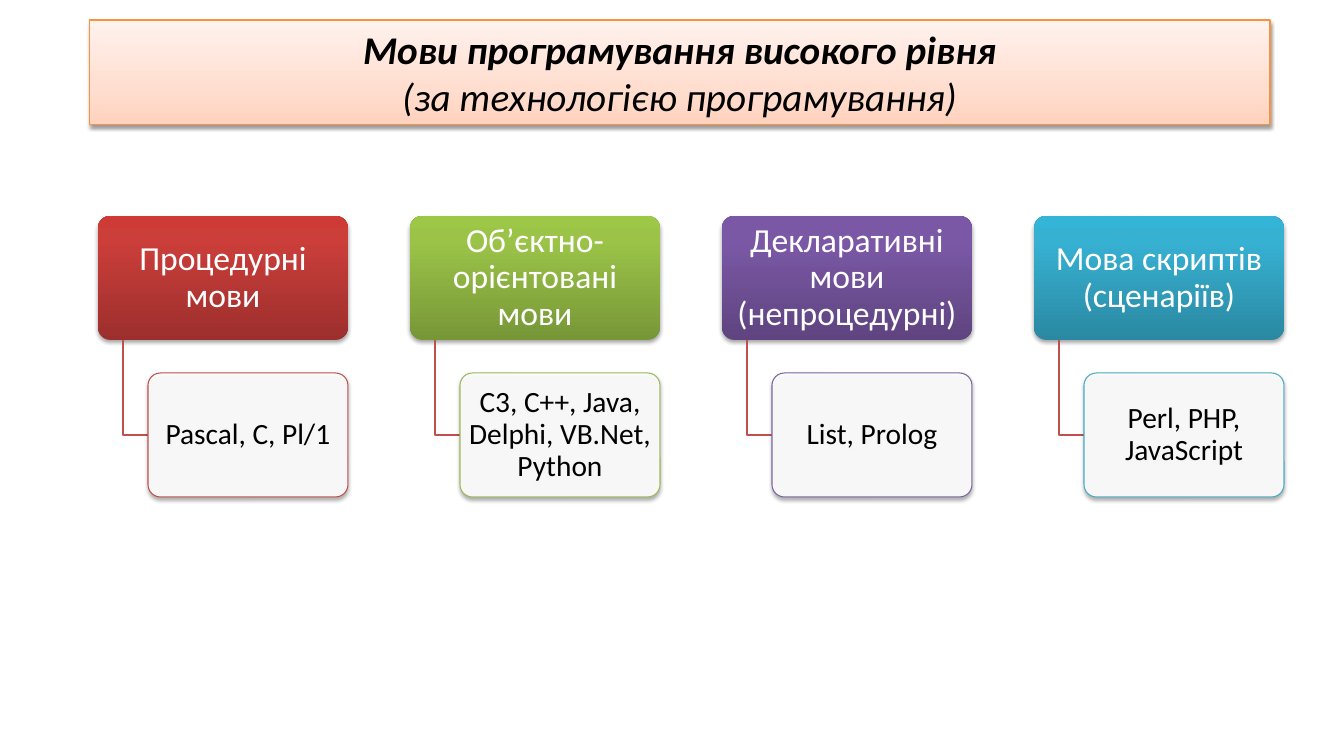
from lxml import etree
from pptx import Presentation
from pptx import util as u
from pptx.dml.color import RGBColor
from pptx.enum import shapes, text
from pptx.oxml import ns

PX = 9071  # EMU in one px
FONT = "Calibri"
WHITE = RGBColor(255, 255, 255)
BLACK = RGBColor(0, 0, 0)
RED = RGBColor(0xC0, 0x50, 0x4D)
GREEN = RGBColor(0x9B, 0xBB, 0x59)
VIOLET = RGBColor(0x80, 0x64, 0xA2)
TEAL = RGBColor(0x4B, 0xAC, 0xC6)
ORANGE = RGBColor(0xF6, 0x92, 0x40)

# Gradient colours run from the bottom edge to the top
PEACH = [RGBColor(0xFF, 0xD2, 0xBD), RGBColor(0xFF, 0xDE, 0xD0), RGBColor(0xFF, 0xF2, 0xED)]
REDS = [RGBColor(0x9C, 0x2F, 0x2D), RGBColor(0xCB, 0x3E, 0x3A), RGBColor(0xCE, 0x3B, 0x37)]
GREENS = [RGBColor(0x77, 0x97, 0x37), RGBColor(0x9B, 0xC3, 0x48), RGBColor(0x9D, 0xC7, 0x46)]
VIOLETS = [RGBColor(0x5F, 0x44, 0x80), RGBColor(0x7B, 0x58, 0xA6), RGBColor(0x7C, 0x57, 0xA8)]
TEALS = [RGBColor(0x2A, 0x88, 0xA2), RGBColor(0x37, 0xB1, 0xD2), RGBColor(0x34, 0xB4, 0xD6)]

GROUPS = [
    ("Процедурні мови", "Pascal, C, Pl/1", REDS, RED),
    ("Об’єктно-орієнтовані мови", "C3, C++, Java, Delphi, VB.Net, Python", GREENS, GREEN),
    ("Декларативні мови (непроцедурні)", "List, Prolog", VIOLETS, VIOLET),
    ("Мова скриптів (сценаріїв)", "Perl, PHP, JavaScript", TEALS, TEAL),
]


def px(*vals):
    return [u.Emu(v * PX) for v in vals]


def add(node, tag, **attrs):
    return etree.SubElement(node, ns.qn(tag), {k: str(v) for k, v in attrs.items()})


def blend(shape, hues, mid):
    """Fill a shape with a vertical three-colour gradient."""
    shape.fill.gradient()
    shape.fill.gradient_angle = 90
    stops = shape.fill._fill._gradFill.find(ns.qn("a:gsLst"))
    for old in list(stops):
        stops.remove(old)
    for pos, hue in zip((0, mid, 100), hues):
        add(add(stops, "a:gs", pos=pos * 1000), "a:srgbClr", val=hue)


def shade(shape, alpha, dist):
    """Give a shape a soft shadow below it."""
    shape.shadow.inherit = False
    effect = shape._element.spPr.find(ns.qn("a:effectLst"))
    drop = add(effect, "a:outerShdw", blurRad=u.Pt(3.1), dist=u.Pt(dist),
               dir=5400000, rotWithShape=0)
    add(add(drop, "a:srgbClr", val=BLACK), "a:alpha", val=alpha * 1000)


def edge(shape, hue, width=0.75):
    shape.line.color.rgb = hue
    shape.line.width = u.Pt(width)


def write(par, words, size, hue, bold=False, italic=False):
    par.alignment = text.PP_ALIGN.CENTER
    run = par.add_run()
    run.text = words
    font = run.font
    font.name, font.size, font.color.rgb = FONT, u.Pt(size), hue
    font.bold, font.italic = bold, italic


def card(slide, box, words, size, hue, side):
    """Add a rounded box with centred text."""
    shape = slide.shapes.add_shape(shapes.MSO_SHAPE.ROUNDED_RECTANGLE, *px(*box))
    shape.adjustments[0] = 0.1
    shade(shape, 35, 1.8)
    frame = shape.text_frame
    frame.word_wrap = True
    frame.vertical_anchor = text.MSO_ANCHOR.MIDDLE
    frame.margin_left, frame.margin_right = px(side, side)
    frame.margin_top, frame.margin_bottom = px(3, 3)
    par = frame.paragraphs[0]
    par.line_spacing = 0.9
    write(par, words, size, hue)
    return shape


def banner(slide, box):
    title = slide.shapes.title
    title.left, title.top, title.width, title.height = px(*box)
    blend(title, PEACH, 35)
    edge(title, ORANGE)
    shade(title, 38, 1.6)
    frame = title.text_frame
    frame.word_wrap = True
    frame.auto_size = text.MSO_AUTO_SIZE.NONE
    frame.vertical_anchor = text.MSO_ANCHOR.MIDDLE
    write(frame.paragraphs[0], "Мови програмування високого рівня", 28, BLACK, True, True)
    write(frame.add_paragraph(), "(за технологією програмування)", 28, BLACK, False, True)


def branch(slide, box, head, langs, hues, hue):
    """Add a heading, its bent line and the languages below it."""
    x, y, w, h = box
    tall = h * 4 // 9
    step = w // 10
    low = y + h - tall

    # Heading
    top = card(slide, (x, y, w, tall), head, 24, WHITE, 5)
    blend(top, hues, 80)
    top.line.fill.background()

    # Bent line
    start, turn, end = px(x + step, x + step, x + 2 * step)
    upper, lower = px(y + tall, low + tall // 2)
    path = slide.shapes.build_freeform(start, upper)
    path.add_line_segments([(turn, lower), (end, lower)], close=False)
    bend = path.convert_to_shape()
    bend.fill.background()
    edge(bend, RED, 2)
    bend.shadow.inherit = False

    # Languages
    leaf = card(slide, (x + 2 * step, low, w - 2 * step, tall), langs, 21, BLACK, 4)
    leaf.fill.solid()
    leaf.fill.fore_color.rgb = WHITE
    tint = leaf._element.spPr.find(ns.qn("a:solidFill"))[0]
    add(tint, "a:alpha", val=90000)
    edge(leaf, hue)


def chart(slide, box):
    """Spread the branches evenly over the box."""
    x, y, w, h = box
    wide = 250
    step = (w - wide) // (len(GROUPS) - 1)
    for i, group in enumerate(GROUPS):
        branch(slide, (x + i * step, y, wide, h), *group)


def main():
    deck = Presentation()
    deck.slide_width, deck.slide_height = px(1344, 756)
    slide = deck.slides.add_slide(deck.slide_layouts[5])
    chart(slide, (98, 216, 1187, 281))
    banner(slide, (89, 20, 1181, 105))
    deck.save("out.pptx")


if __name__ == "__main__":
    main()
